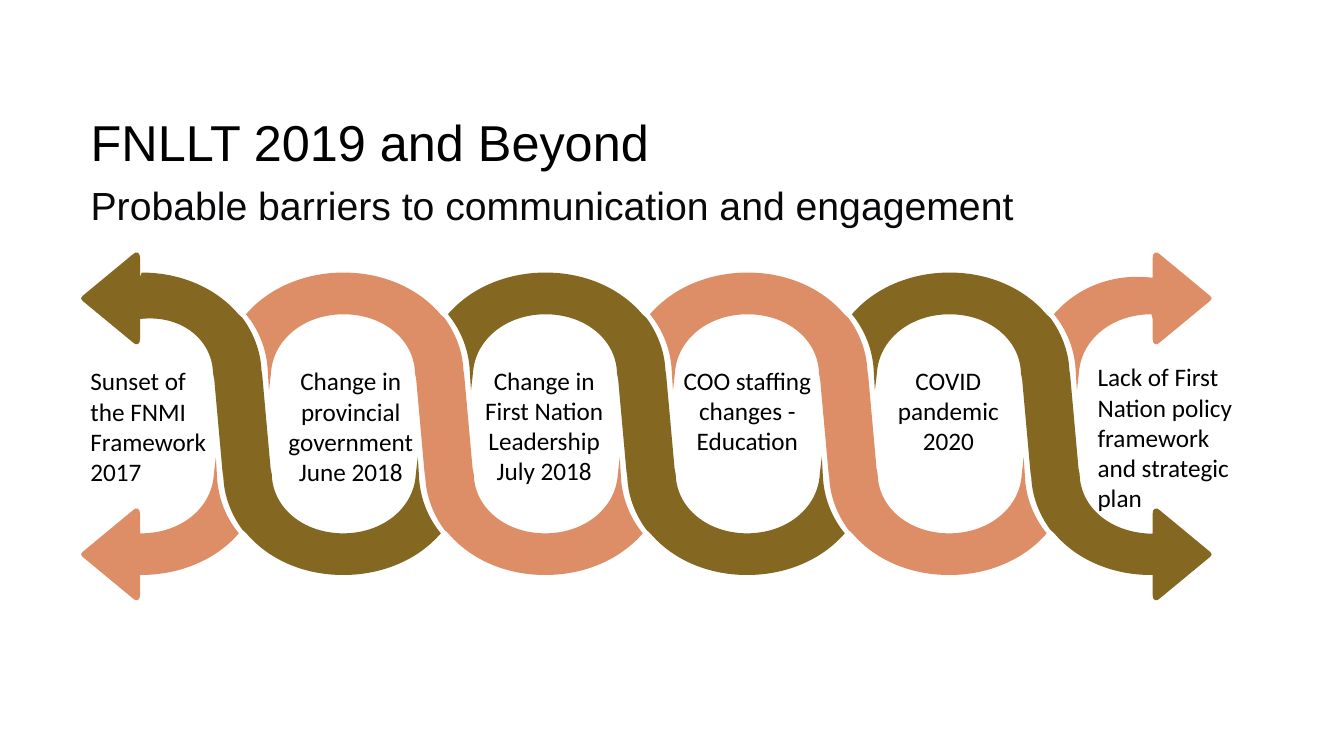
from dataclasses import dataclass

from lxml import etree
from pptx import Presentation
from pptx.dml.color import RGBColor
from pptx.enum import text
from pptx.oxml.ns import qn
from pptx.util import Cm, Pt

HEADINGS = [
    ("FNLLT 2019 and Beyond", 2.75, 1.6),
    ("Probable barriers to communication and engagement", 4.45, 1.4),
]
BARRIERS = [
    ("Sunset of the FNMI Framework 2017", "left", 2.03, 9.09, 3.86, 3.33),
    ("Change in provincial government June 2018", "center", 6.68, 9.09, 4.32, 3.33),
    ("Change in First Nation Leadership July 2018", "center", 11.76, 9.07, 3.91, 3.33),
    ("COO staffing changes - Education", "center", 16.97, 9.07, 3.73, 3.33),
    ("COVID pandemic 2020", "center", 21.74, 9.07, 4.32, 2.57),
    ("Lack of First Nation policy framework and strategic plan", "left", 27.41, 8.99, 4.01, 4.09),
]

FIRST_X, CENTER_Y, PITCH = 6.11, 10.68, 5.09
BAND_Y = 3.29

TAIL = [
    (-4.67, -2.36, -4.47, -1.85, -4.45, -1.32),
    (-4.42, -0.84),
    (-4.37, -1.27),
    (-4.32, -2.13, -3.53, -2.76, -2.54, -2.76),
]
SIDE = [
    (-1.55, -2.76, -0.76, -2.13, -0.74, -1.27),
    (-0.71, -1.12),
    (-0.5, 1.22),
    (-0.48, 1.35),
    (-0.46, 1.83, -0.28, 2.29, 0, 2.67),
    (0.1, 2.76),
    (0.64, 3.4, 1.52, 3.81, 2.54, 3.81),
]
OUTER = [(3.56, 3.81, 4.45, 3.4, 5, 2.76)]
ARROW = [
    (0, -0.52),
    (0, -1.03),
    (0, -1.16, -0.1, -1.2, -0.18, -1.11),
    (-1.45, -0.06),
    (-1.5, -0.03, -1.5, 0.03, -1.45, 0.06),
    (-0.18, 1.11),
    (-0.1, 1.2, 0, 1.16, 0, 1.03),
    (0, 0.52),
]


@dataclass(frozen=True)
class Theme:
    olive: RGBColor = RGBColor(0x84, 0x67, 0x21)
    salmon: RGBColor = RGBColor(0xDE, 0x8E, 0x67)
    title: RGBColor = RGBColor(0, 0, 0)
    subtitle: RGBColor = RGBColor(0x09, 0x08, 0x0B)
    label: RGBColor = RGBColor(0, 0, 0)
    heading_font: str = "Arial"
    label_font: str = "Calibri"
    title_size: int = 36
    subtitle_size: int = 28
    label_size: int = 18


THEME = Theme()


def turn(segments):
    return [tuple(-v for v in seg) for seg in segments]


def shift(segments, dx, dy):
    return [tuple(v + (dy if i % 2 else dx) for i, v in enumerate(seg)) for seg in segments]


def link():
    half = TAIL + SIDE + OUTER
    return half + turn(half)


def end(drop):
    return shift(ARROW, -2.58, drop - BAND_Y) + SIDE + OUTER + turn(TAIL + SIDE)


def stub(drop):
    return OUTER + turn(TAIL) + shift(ARROW, 2.51, BAND_Y + drop)


def to_points(seg):
    return [(Cm(x), Cm(y)) for x, y in zip(seg[::2], seg[1::2])]


def round_curves(sp, segments):
    lines = iter(list(sp._element.iter(qn("a:lnTo"))))
    for seg in segments:
        steps = [next(lines) for _ in to_points(seg)]
        if len(steps) == 1:
            continue
        curve = etree.Element(qn("a:cubicBezTo"))
        steps[0].addprevious(curve)
        for step in steps:
            curve.append(step[0])
            step.getparent().remove(step)


def add_strand(group, pieces, color):
    builder = None
    drawn = []
    for k, segments in pieces:
        placed = shift(segments, FIRST_X + k * PITCH, CENTER_Y)
        start = to_points(placed[-1])[-1]
        if builder is None:
            builder = group.shapes.build_freeform(*start)
        else:
            builder.move_to(*start)
        builder.add_line_segments([pt for seg in placed for pt in to_points(seg)], close=True)
        drawn += placed
    sp = builder.convert_to_shape()
    round_curves(sp, drawn)
    sp.shadow.inherit = False
    sp.fill.solid()
    sp.fill.fore_color.rgb = color
    sp.line.fill.background()


def add_run(p, words, font, size, color):
    r = p.add_run()
    r.text = words
    r.font.name = font
    r.font.size = Pt(size)
    r.font.color.rgb = color


def place(sp, left, top, width, height):
    sp.left, sp.top, sp.width, sp.height = Cm(left), Cm(top), Cm(width), Cm(height)


def add_headings(slide):
    styles = [(THEME.title_size, THEME.title), (THEME.subtitle_size, THEME.subtitle)]
    for sp, (words, top, height), (size, color) in zip(slide.placeholders, HEADINGS, styles):
        place(sp, 2.03, top, 30.73, height)
        tf = sp.text_frame
        tf.word_wrap = True
        tf.auto_size = text.MSO_AUTO_SIZE.NONE
        tf.vertical_anchor = text.MSO_ANCHOR.MIDDLE
        p = tf.paragraphs[0]
        pPr = p._p.get_or_add_pPr()
        pPr.set("marL", "0")
        pPr.set("indent", "0")
        etree.SubElement(pPr, qn("a:buNone"))
        p.alignment = text.PP_ALIGN.LEFT
        p.space_before = Pt(0)
        add_run(p, words, THEME.heading_font, size, color)


def add_braid(slide):
    group = slide.shapes.add_group_shape()
    add_strand(group, [(0, end(0.13)), (2, link()), (4, turn(end(0)))], THEME.olive)
    add_strand(group, [(-1, stub(0)), (1, link()), (3, link()), (5, turn(stub(-0.13)))], THEME.salmon)


def add_labels(slide):
    aligns = {"left": text.PP_ALIGN.LEFT, "center": text.PP_ALIGN.CENTER}
    for words, align, *box in BARRIERS:
        tf = slide.shapes.add_textbox(*map(Cm, box)).text_frame
        tf.word_wrap = True
        tf.auto_size = text.MSO_AUTO_SIZE.SHAPE_TO_FIT_TEXT
        p = tf.paragraphs[0]
        p.alignment = aligns[align]
        add_run(p, words, THEME.label_font, THEME.label_size, THEME.label)


def main():
    prs = Presentation()
    prs.slide_width, prs.slide_height = Cm(33.87), Cm(19.05)
    slide = prs.slides.add_slide(prs.slide_layouts[1])
    add_headings(slide)
    add_braid(slide)
    add_labels(slide)
    prs.save("out.pptx")


if __name__ == "__main__":
    main()
